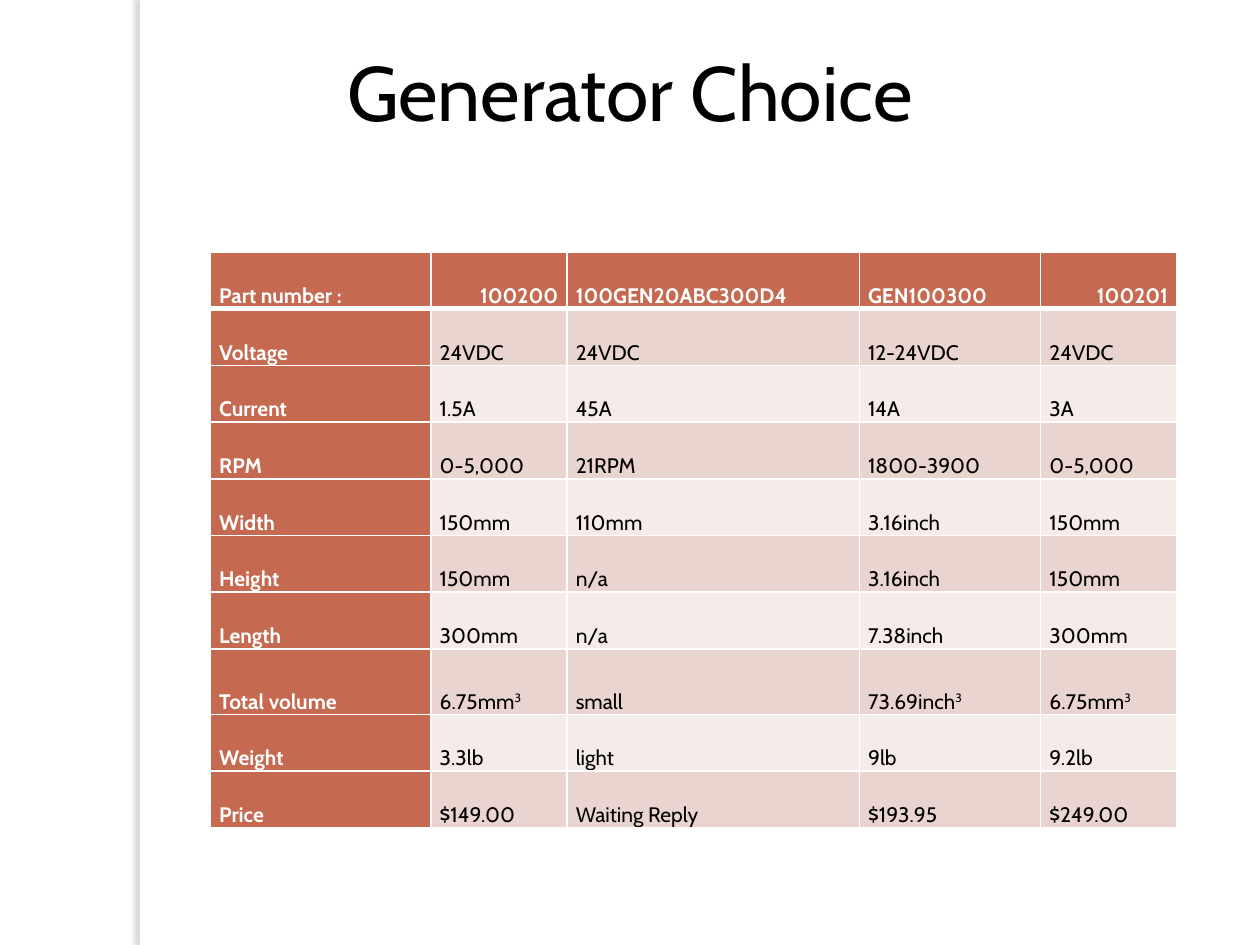
from lxml import etree
from pptx import Presentation
from pptx import util as u
from pptx.dml.color import RGBColor
from pptx.enum import shapes, text
from pptx.oxml import ns

PX = 9144
WHITE, BLACK = "FFFFFF", "000000"
RUST, ROSE, BLUSH = "C66951", "EAD4D0", "F5EBE9"
SHADE = "66685B"

COLUMNS = [175, 108, 232, 144, 108]
ROW, TALL_ROW = 45, 52
VOLUME = "Total volume"
CUBED = "3"
SPECS = [
    ["Part number :", "100200", "100GEN20ABC300D4", "GEN100300", "100201"],
    ["Voltage", "24VDC", "24VDC", "12-24VDC", "24VDC"],
    ["Current", "1.5A", "45A", "14A", "3A"],
    ["RPM", "0-5,000", "21RPM", "1800-3900", "0-5,000"],
    ["Width", "150mm", "110mm", "3.16inch", "150mm"],
    ["Height", "150mm", "n/a", "3.16inch", "150mm"],
    ["Length", "300mm", "n/a", "7.38inch", "300mm"],
    [VOLUME, ("6.75mm", CUBED), "small", ("73.69inch", CUBED), ("6.75mm", CUBED)],
    ["Weight", "3.3lb", "light", "9lb", "9.2lb"],
    ["Price", "$149.00", "Waiting Reply", "$193.95", "$249.00"],
]


def px(length):
    return u.Emu(length * PX)


def rgb(code):
    return RGBColor.from_string(code)


def add(parent, tag, **attributes):
    return etree.SubElement(parent, ns.qn(tag), **attributes)


class Deck:
    font = "Cabin"

    def __init__(self, width, height):
        self.deck = Presentation()
        self.deck.slide_width, self.deck.slide_height = px(width), px(height)
        self.slide = self.deck.slides.add_slide(self.deck.slide_layouts[5])
        fill = self.slide.background.fill
        fill.solid()
        fill.fore_color.rgb = rgb(WHITE)

    def run(self, paragraph, words, size, color, bold=False, raised=False):
        run = paragraph.add_run()
        run.text = words
        run.font.name, run.font.size = self.font, u.Pt(size)
        run.font.bold = bold
        run.font.color.rgb = rgb(color)
        if raised:
            run.font._element.set("baseline", "30000")

    def title(self, words, left, top, width, height):
        heading = self.slide.shapes.title
        heading.left, heading.top = px(left), px(top)
        heading.width, heading.height = px(width), px(height)
        self.slide.shapes._spTree.append(heading._element)
        frame = heading.text_frame
        frame.word_wrap = True
        frame.auto_size = text.MSO_AUTO_SIZE.NONE
        frame.vertical_anchor = text.MSO_ANCHOR.TOP
        paragraph = frame.paragraphs[0]
        paragraph.alignment = text.PP_ALIGN.CENTER
        self.run(paragraph, words, 44, BLACK)

    def strip(self, left, top, width, height):
        band = self.slide.shapes.add_shape(
            shapes.MSO_SHAPE.RECTANGLE, px(left), px(top), px(width), px(height))
        band.fill.solid()
        band.fill.fore_color.rgb = rgb(WHITE)
        band.line.fill.background()
        band.shadow.inherit = False
        effects = band._element.spPr.find(ns.qn("a:effectLst"))
        shadow = add(effects, "a:outerShdw", blurRad=str(u.Pt(3)), dist=str(u.Pt(3)),
                     dir="10800000", algn="tl", rotWithShape="0")
        add(add(shadow, "a:srgbClr", val=SHADE), "a:alpha", val="25000")

    def borders(self, cell, top, bottom):
        properties = cell._tc.get_or_add_tcPr()
        for side, points in (("L", 1), ("R", 1), ("T", top), ("B", bottom)):
            line = add(properties, f"a:ln{side}", w=str(u.Pt(points)))
            add(add(line, "a:solidFill"), "a:srgbClr", val=WHITE)

    def cell(self, cell, value, row, column):
        self.borders(cell, 3 if row == 1 else 1, 3 if row == 0 else 1)
        heading = row == 0 or column == 0
        cell.fill.solid()
        cell.fill.fore_color.rgb = rgb(RUST if heading else ROSE if row % 2 else BLUSH)
        cell.margin_left = cell.margin_right = px(7)
        cell.margin_top = cell.margin_bottom = 0
        cell.vertical_anchor = text.MSO_ANCHOR.BOTTOM
        paragraph = cell.text_frame.paragraphs[0]
        paragraph.line_spacing = 1.15
        paragraph.space_after = u.Pt(12)
        if row == 0 and value.isdigit():
            paragraph.alignment = text.PP_ALIGN.RIGHT
        parts = (value,) if isinstance(value, str) else value
        for index, words in enumerate(parts):
            self.run(paragraph, words, 12, WHITE if heading else BLACK, heading, index > 0)

    def table(self, rows, columns, left, top):
        heights = [TALL_ROW if row[0] == VOLUME else ROW for row in rows]
        table = self.slide.shapes.add_table(
            len(rows), len(columns), px(left), px(top),
            px(sum(columns)), px(sum(heights))).table
        for column, width in zip(table.columns, columns):
            column.width = px(width)
        for r, (values, height) in enumerate(zip(rows, heights)):
            table.rows[r].height = px(height)
            for c, value in enumerate(values):
                self.cell(table.cell(r, c), value, r, c)


def main():
    generator = Deck(1000, 750)
    generator.strip(111, 0, 8, 750)
    generator.table(SPECS, COLUMNS, 167, 200)
    generator.title("Generator Choice", 50, 30, 900, 125)
    generator.deck.save("out.pptx")


if __name__ == "__main__":
    main()
